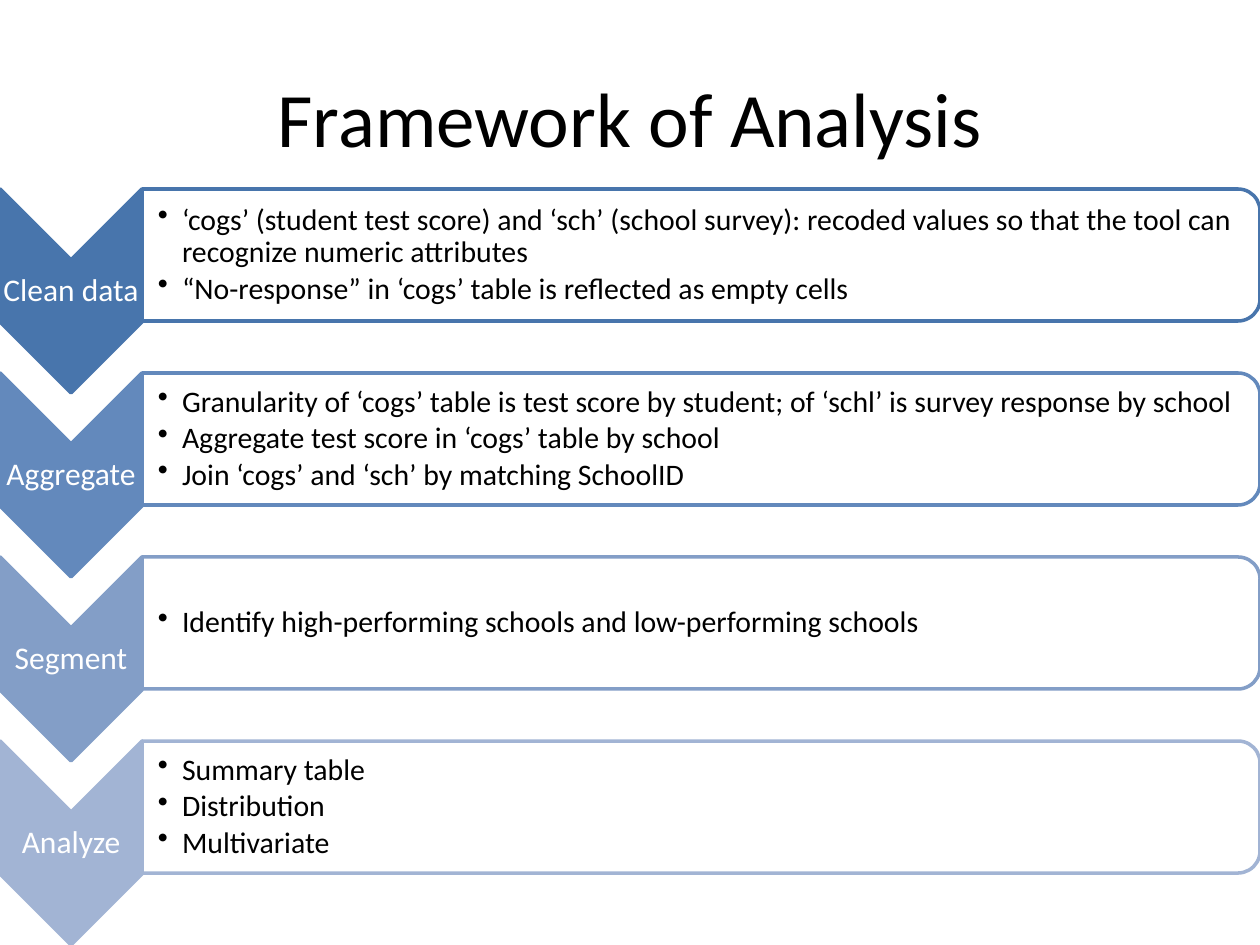
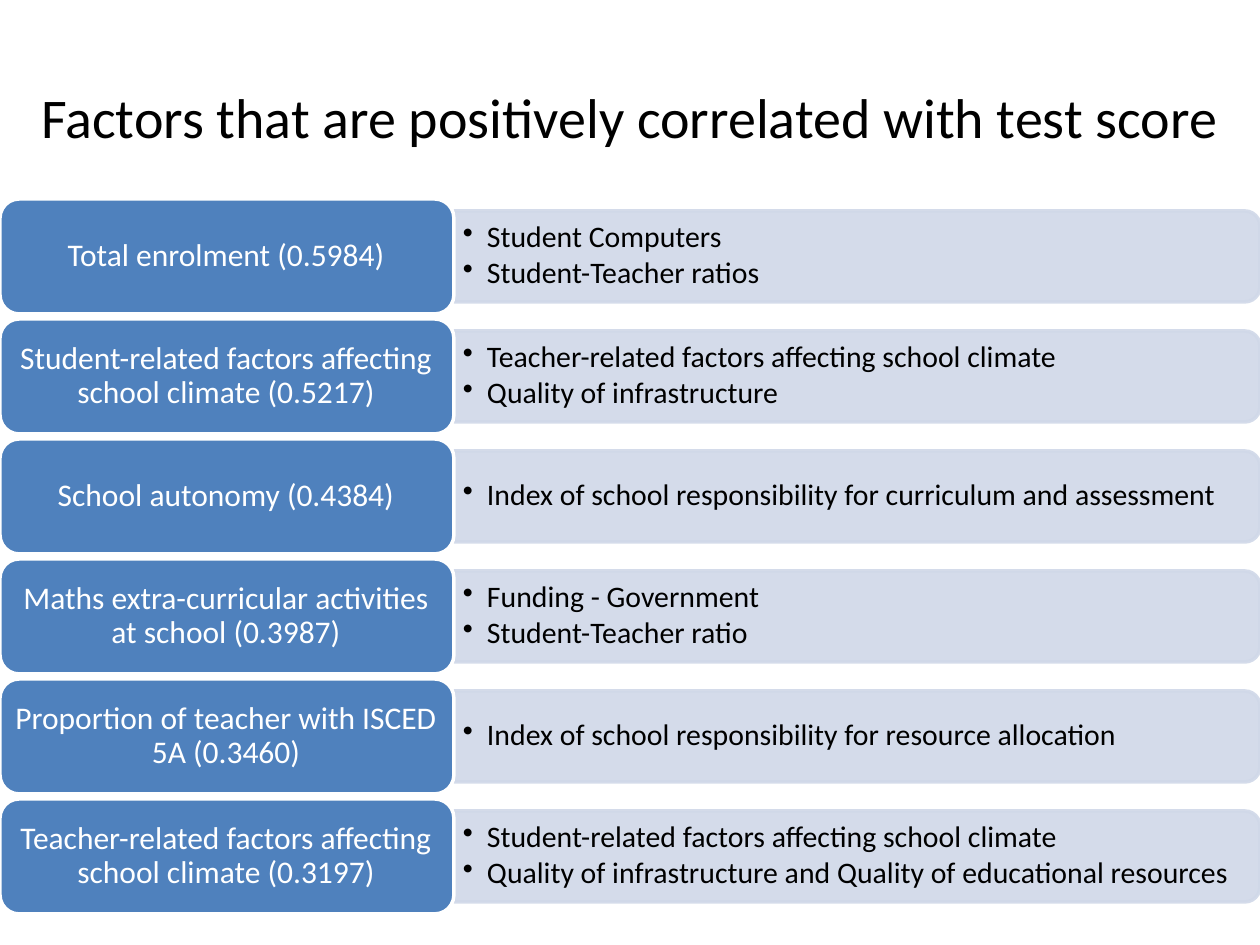
from lxml.etree import SubElement
from pptx import Presentation
from pptx.dml.color import RGBColor
from pptx.enum.shapes import MSO_SHAPE
from pptx.enum.text import MSO_ANCHOR, PP_ALIGN
from pptx.oxml.ns import qn
from pptx.util import Emu, Pt

WIDTH, HEIGHT = 1260, 945
EMU_PER_INCH, PX_PER_INCH = 914400, 126

WHITE = RGBColor(0xFF, 0xFF, 0xFF)
BLACK = RGBColor(0x00, 0x00, 0x00)
BLUE = RGBColor(0x4F, 0x81, 0xBD)
PALE_BLUE = RGBColor(0xD0, 0xD8, 0xE8)
STEP_BLUES = [
    RGBColor(0x48, 0x75, 0xAC),
    RGBColor(0x63, 0x89, 0xBC),
    RGBColor(0x83, 0x9E, 0xC7),
    RGBColor(0xA2, 0xB4, 0xD4),
]

STEPS = [
    ("Clean data", [
        "‘cogs’ (student test score) and ‘sch’ (school survey): recoded values "
        "so that the tool can recognize numeric attributes",
        "“No-response” in ‘cogs’ table is reflected as empty cells"]),
    ("Aggregate", [
        "Granularity of ‘cogs’ table is test score by student; "
        "of ‘schl’ is survey response by school",
        "Aggregate test score in ‘cogs’ table by school",
        "Join ‘cogs’ and ‘sch’ by matching SchoolID"]),
    ("Segment", ["Identify high-performing schools and low-performing schools"]),
    ("Analyze", ["Summary table", "Distribution", "Multivariate"]),
]

FACTORS = [
    ("Total enrolment (0.5984)", ["Student Computers", "Student-Teacher ratios"]),
    ("Student-related factors affecting school climate (0.5217)", [
        "Teacher-related factors affecting school climate",
        "Quality of infrastructure"]),
    ("School autonomy (0.4384)", [
        "Index of school responsibility for curriculum and assessment"]),
    ("Maths extra-curricular activities at school (0.3987)", [
        "Funding - Government", "Student-Teacher ratio"]),
    ("Proportion of teacher with ISCED 5A (0.3460)", [
        "Index of school responsibility for resource allocation"]),
    ("Teacher-related factors affecting school climate (0.3197)", [
        "Student-related factors affecting school climate",
        "Quality of infrastructure and Quality of educational resources"]),
]


def px(n):
    return Emu(round(n * EMU_PER_INCH / PX_PER_INCH))


def set_alpha(fill, percent):
    color = fill._xPr.find(qn("a:solidFill"))[0]
    SubElement(color, qn("a:alpha"), val=str(percent * 1000))


class Deck:
    font = "Calibri"
    label_size, bullet_size = 18, 17
    bullet_indent = 24

    def __init__(self, prs):
        self.prs = prs
        self.slide = None

    def style(self, p, size, color):
        for r in p.runs:
            r.font.name = self.font
            r.font.size = Pt(size)
            r.font.color.rgb = color

    def new_slide(self, title, size, x, w):
        self.slide = self.prs.slides.add_slide(self.prs.slide_layouts[5])
        sp = self.slide.shapes.title
        sp.left, sp.top, sp.width, sp.height = px(x), px(38), px(w), px(157)
        tf = sp.text_frame
        tf.text = title
        tf.vertical_anchor = MSO_ANCHOR.MIDDLE
        tf.paragraphs[0].alignment = PP_ALIGN.CENTER
        self.style(tf.paragraphs[0], size, BLACK)

    def shape(self, kind, x, y, w, h, fill, line, alpha=100, turned=False):
        """Draw a shape whose visible box is x, y, w, h, even when turned by 90°."""
        if turned:
            x, y, w, h = x + (w - h) / 2, y + (h - w) / 2, h, w
        sp = self.slide.shapes.add_shape(kind, px(x), px(y), px(w), px(h))
        sp.rotation = 90 if turned else 0
        sp.shadow.inherit = False
        sp.fill.solid()
        sp.fill.fore_color.rgb = fill
        sp.line.color.rgb = line
        sp.line.width = Pt(2)
        if alpha < 100:
            set_alpha(sp.fill, alpha)
        return sp

    def text(self, lines, x, y, w, h, inset):
        """Add a centred-in-height text box; inset is (left, top, right, bottom)."""
        sp = self.slide.shapes.add_textbox(px(x), px(y), px(w), px(h))
        tf = sp.text_frame
        tf.word_wrap = True
        tf.vertical_anchor = MSO_ANCHOR.MIDDLE
        tf.margin_left, tf.margin_top, tf.margin_right, tf.margin_bottom = map(px, inset)
        tf.text = "\n".join(lines)
        return tf.paragraphs

    def spacing(self, p, after):
        p.line_spacing = 0.9
        pPr = p._p.get_or_add_pPr()
        SubElement(SubElement(pPr, qn("a:spcAft")), qn("a:spcPct"), val=str(after * 1000))
        return pPr

    def label(self, text, *box, inset):
        p = self.text([text], *box, inset)[0]
        p.alignment = PP_ALIGN.CENTER
        self.spacing(p, 35)
        self.style(p, self.label_size, WHITE)

    def bullets(self, lines, *box, inset):
        for p in self.text(lines, *box, inset):
            p.level = 1
            pPr = self.spacing(p, 15)
            pPr.set("marL", str(px(self.bullet_indent)))
            pPr.set("indent", str(-px(self.bullet_indent)))
            SubElement(pPr, qn("a:buChar"), char="•")
            self.style(p, self.bullet_size, BLACK)


def add_framework(deck):
    top, pitch, step_w = 189, 184, 142
    deck.new_slide("Framework of Analysis", 44, 63, 1134)
    for i, ((name, lines), color) in enumerate(zip(STEPS, STEP_BLUES)):
        y = top + i * pitch
        deck.shape(MSO_SHAPE.CHEVRON, 0, y, step_w, 204, color, color, turned=True)
        deck.label(name, 0, y + 71, step_w, 62, inset=(1, 1, 1, 1))
        deck.shape(MSO_SHAPE.ROUND_2_SAME_RECTANGLE, step_w, y, WIDTH - step_w, 132,
                   WHITE, color, alpha=90, turned=True)
        deck.bullets(lines, step_w, y + 6, 1111, 120, inset=(16, 1, 1, 1))


def add_factors(deck):
    top, pitch, factor_w = 199, 120, 454
    inset = (9, 5, 9, 5)
    deck.new_slide("Factors that are positively correlated with test score", 32, 0, WIDTH)
    for i, (name, lines) in enumerate(FACTORS):
        y = top + i * pitch
        panel = deck.shape(MSO_SHAPE.ROUND_2_SAME_RECTANGLE, factor_w, y + 12,
                           WIDTH - factor_w, 91, PALE_BLUE, PALE_BLUE, alpha=90, turned=True)
        set_alpha(panel.line.fill, 90)
        deck.bullets(lines, factor_w, y + 16, 801, 82, inset=inset)
        deck.shape(MSO_SHAPE.ROUNDED_RECTANGLE, 0, y, factor_w, 115, BLUE, WHITE)
        deck.label(name, 5, y + 6, 442, 103, inset=inset)


def main():
    prs = Presentation()
    prs.slide_width, prs.slide_height = px(WIDTH), px(HEIGHT)
    deck = Deck(prs)
    add_framework(deck)
    add_factors(deck)
    prs.save("out.pptx")


if __name__ == "__main__":
    main()
